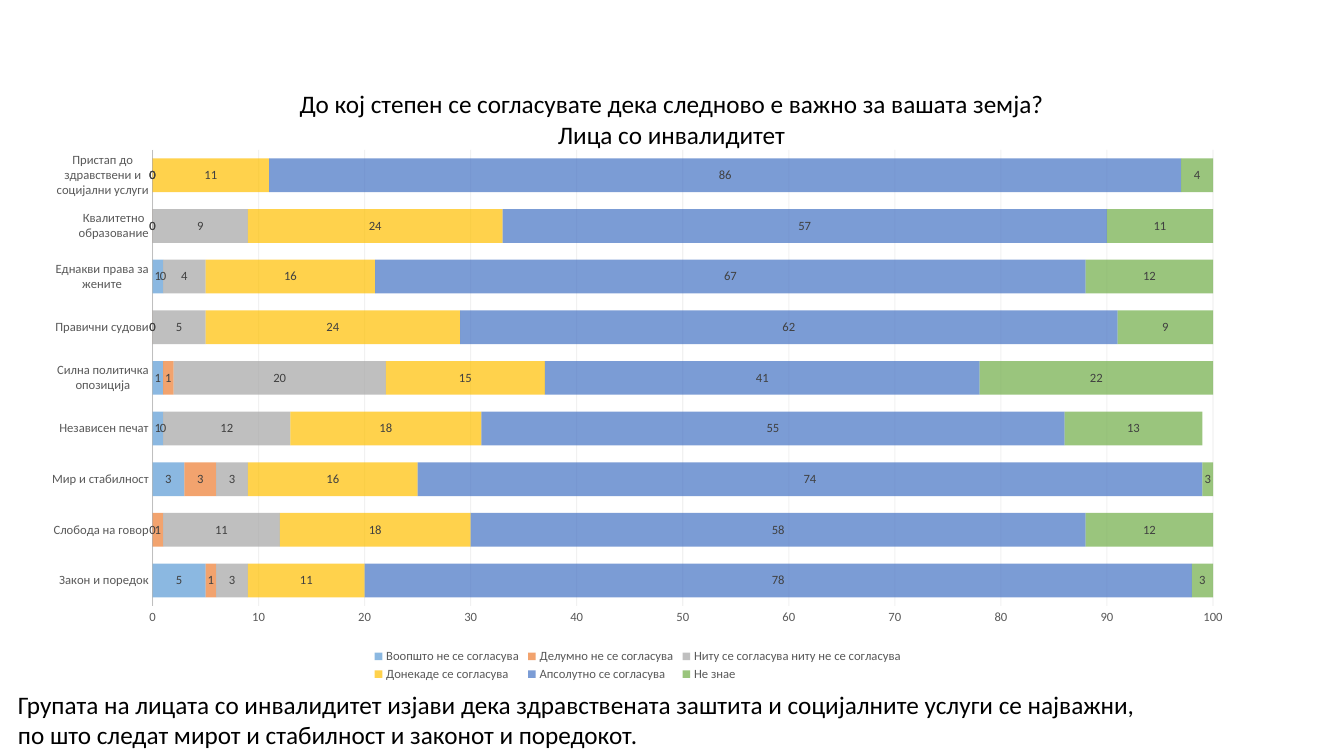
from lxml import etree
from pptx import Presentation
from pptx.chart.data import CategoryChartData
from pptx.dml.color import RGBColor
from pptx.enum.chart import XL_CHART_TYPE as CT, XL_LABEL_POSITION as LP
from pptx.enum.chart import XL_LEGEND_POSITION as LG, XL_TICK_MARK as TM
from pptx.enum.text import MSO_ANCHOR, MSO_AUTO_SIZE, PP_ALIGN
from pptx.oxml.ns import qn
from pptx.util import Inches, Pt

FONT = "Calibri"
COLORS = {
    "text": "000000", "axis_text": "595959", "label": "404040",
    "axis": "BFBFBF", "grid": "D9D9D9",
}
TITLE = [
    "До кој степен се согласувате дека следново е важно за вашата земја?",
    "Лица со инвалидитет",
]
SUMMARY = [
    "Групата на лицата со инвалидитет изјави дека здравствената заштита "
    "и социјалните услуги се најважни,",
    "по што следат мирот и стабилност и законот и поредокот.",
]
CATEGORIES = [
    "Закон и поредок", "Слобода на говор", "Мир и стабилност",
    "Независен печат", "Силна политичка опозиција", "Правични судови",
    "Еднакви права за жените", "Квалитетно образование",
    "Пристап до здравствени и социјални услуги",
]
# Answer, bar colour, percentages from the bottom category up
ANSWERS = [
    ("Воопшто не се согласува", "5B9BD5", (5, 0, 3, 1, 1, 0, 1, 0, 0)),
    ("Делумно не се согласува", "ED7D31", (1, 1, 3, 0, 1, 0, 0, 0, 0)),
    ("Ниту се согласува ниту не се согласува", "A5A5A5",
     (3, 11, 3, 12, 20, 5, 4, 9, 0)),
    ("Донекаде се согласува", "FFC000", (11, 18, 16, 18, 15, 24, 16, 24, 11)),
    ("Апсолутно се согласува", "4472C4", (78, 58, 74, 55, 41, 62, 67, 57, 86)),
    ("Не знае", "70AD47", (3, 12, 3, 13, 22, 9, 12, 11, 4)),
]


def set_font(font, size, color):
    font.name, font.size = FONT, Pt(size)
    font.bold = False
    font.color.rgb = RGBColor.from_string(color)


def write_lines(shape, box, lines, align):
    shape.left, shape.top, shape.width, shape.height = map(Inches, box)
    tf = shape.text_frame
    tf.word_wrap = False
    tf.auto_size = MSO_AUTO_SIZE.SHAPE_TO_FIT_TEXT
    tf.vertical_anchor = MSO_ANCHOR.TOP
    for i, line in enumerate(lines):
        p = tf.add_paragraph() if i else tf.paragraphs[0]
        p.alignment = align
        r = p.add_run()
        r.text = line
        set_font(r.font, 18, COLORS["text"])


def set_alpha(fill_format_parent, percent):
    for clr in fill_format_parent.iter(qn("a:srgbClr")):
        etree.SubElement(clr, qn("a:alpha")).set("val", str(percent * 1000))


def set_layout(element, index, box, inner=False):
    """Place a chart part by fractions of the chart area."""
    for old in element.findall(qn("c:layout")):
        element.remove(old)
    layout = etree.Element(qn("c:layout"))
    manual = etree.SubElement(layout, qn("c:manualLayout"))
    pairs = [("layoutTarget", "inner")] if inner else []
    pairs += [("xMode", "edge"), ("yMode", "edge")]
    pairs += zip("xywh", box)
    for tag, val in pairs:
        etree.SubElement(manual, qn("c:" + tag)).set("val", str(val))
    element.insert(index, layout)


def style_axes(chart):
    cat, val = chart.category_axis, chart.value_axis
    for axis in (cat, val):
        axis.major_tick_mark = axis.minor_tick_mark = TM.NONE
        set_font(axis.tick_labels.font, 9, COLORS["axis_text"])
    cat.has_major_gridlines = False
    cat.format.line.width = Pt(0.75)
    cat.format.line.color.rgb = RGBColor.from_string(COLORS["axis"])
    val.minimum_scale, val.maximum_scale, val.major_unit = 0, 100, 10
    val.tick_labels.number_format = "0"
    val.tick_labels.number_format_is_linked = False
    val.format.line.fill.background()
    grid = val.major_gridlines.format.line
    grid.width = Pt(0.75)
    grid.color.rgb = RGBColor.from_string(COLORS["grid"])
    set_alpha(val._element.find(qn("c:majorGridlines")), 35)


def style_series(series, color):
    series.format.fill.solid()
    series.format.fill.fore_color.rgb = RGBColor.from_string(color)
    set_alpha(series._element.find(qn("c:spPr")), 70)
    labels = series.data_labels
    labels.show_value = True
    labels.number_format = "0"
    labels.number_format_is_linked = False
    labels.position = LP.CENTER
    set_font(labels.font, 9, COLORS["label"])


def add_agreement_chart(s, box):
    data = CategoryChartData(number_format="0")
    data.categories = CATEGORIES
    for name, _, values in ANSWERS:
        data.add_series(name, values)
    chart = s.shapes.add_chart(CT.BAR_STACKED, *map(Inches, box), data).chart
    set_font(chart.font, 10, COLORS["text"])
    chart.has_title = False
    style_axes(chart)

    plot = chart.plots[0]
    plot.gap_width, plot.overlap = 50, 100
    plot.vary_by_categories = False
    for series, (_, color, _) in zip(plot.series, ANSWERS):
        style_series(series, color)

    chart.has_legend = True
    legend = chart.legend
    legend.position = LG.BOTTOM
    legend.include_in_layout = False
    set_font(legend.font, 9, COLORS["axis_text"])
    set_layout(legend._element, 1, (0.28, 0.93, 0.44, 0.07))
    plot_area = chart._chartSpace.find(".//" + qn("c:plotArea"))
    set_layout(plot_area, 0, (0.102, 0.02, 0.87, 0.836), inner=True)


def main():
    prs = Presentation()
    prs.slide_width, prs.slide_height = Inches(13.33), Inches(7.5)
    s = prs.slides.add_slide(prs.slide_layouts[5])

    # Question
    write_lines(s.shapes.title, (2.84, 0.83, 7.64, 0.71), TITLE, PP_ALIGN.CENTER)
    # Answers by topic
    add_agreement_chart(s, (0.28, 1.38, 12.09, 5.41))
    # Conclusion
    box = (0.08, 6.79, 11.46, 0.71)
    write_lines(s.shapes.add_textbox(*map(Inches, box)), box, SUMMARY, PP_ALIGN.LEFT)

    prs.save("out.pptx")


if __name__ == "__main__":
    main()
